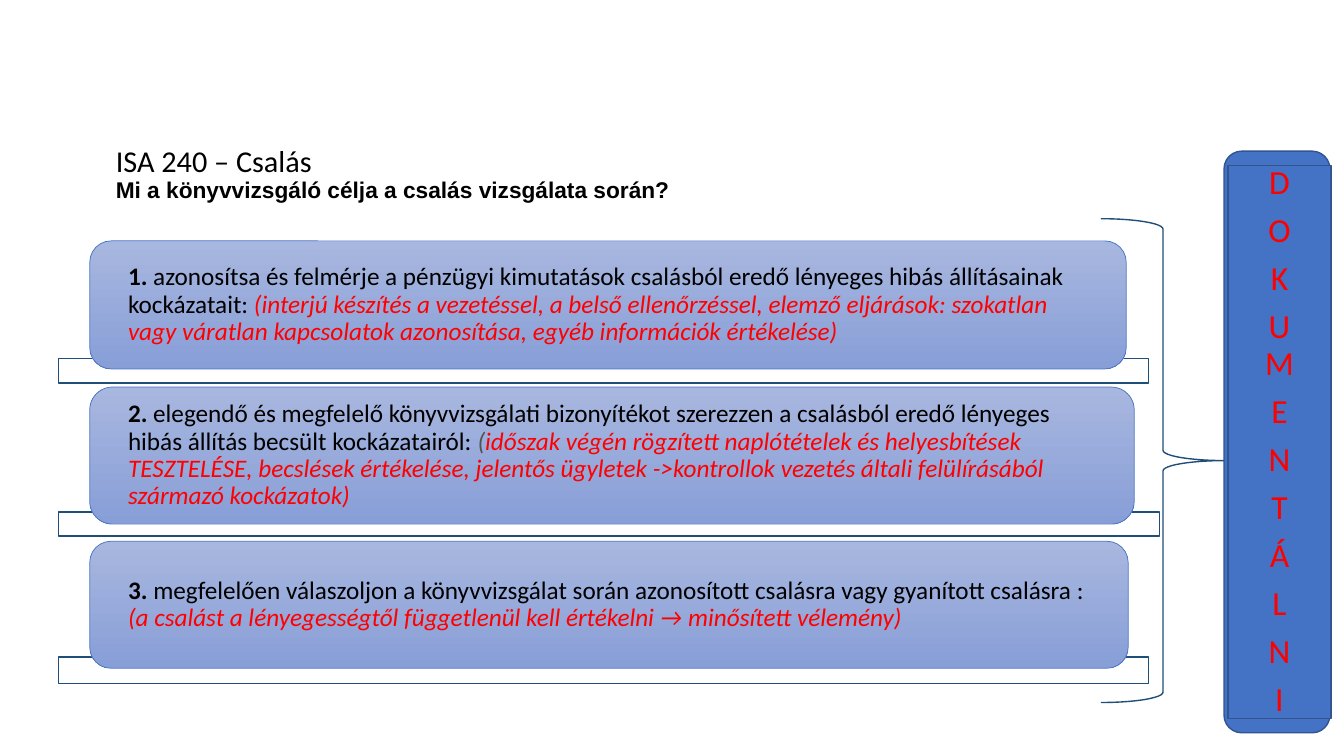
"""Build the ISA 240 slide on the auditor's objectives regarding fraud."""
import dataclasses
import typing

import pptx
import pptx.dml.color
import pptx.enum.shapes
import pptx.enum.text
import pptx.util

Inches = pptx.util.Inches
Pt = pptx.util.Pt
SHAPE = pptx.enum.shapes.MSO_SHAPE
ANCHOR = pptx.enum.text.MSO_ANCHOR
ALIGN = pptx.enum.text.PP_ALIGN

COLORS = {
    "black": "000000",
    "white": "FFFFFF",
    "red": "FF0000",
    "gray": "525252",
    "navy": "1F4E79",
    "blue": "4472C4",
    "edge": "325491",
    "card_top": "A8B7DF",
    "card_bottom": "889ED7",
}
CARD_LEFT = 0.89
BAR_LEFT = 0.58
TEXT_MARGIN = 0.06


class Run(typing.NamedTuple):
    text: str
    color: str = "black"
    bold: bool = False
    italic: bool = False
    size: typing.Optional[float] = None
    font: str = "Calibri"


@dataclasses.dataclass
class Box:
    left: float
    top: float
    width: float
    height: float

    def lengths(self) -> list:
        return [Inches(v) for v in dataclasses.astuple(self)]


@dataclasses.dataclass
class Objective:
    card: Box
    bar: Box
    runs: list


OBJECTIVES = [
    Objective(
        Box(CARD_LEFT, 2.39, 10.28, 1.27),
        Box(BAR_LEFT, 3.56, 10.81, 0.24),
        [
            Run("1. ", bold=True),
            Run("azonosítsa és felmérje a pénzügyi kimutatások csalásból eredő "
                "lényeges hibás állításainak kockázatait: "),
            Run("(interjú készítés a vezetéssel, a belső ellenőrzéssel, elemző "
                "eljárások: szokatlan vagy váratlan kapcsolatok azonosítása, "
                "egyéb információk értékelése)", "red", italic=True),
        ],
    ),
    Objective(
        Box(CARD_LEFT, 3.84, 10.36, 1.36),
        Box(BAR_LEFT, 5.08, 10.92, 0.24),
        [
            Run("2.", bold=True),
            Run(" elegendő és megfelelő könyvvizsgálati bizonyítékot szerezzen a "
                "csalásból eredő lényeges hibás állítás becsült kockázatairól: "),
            Run("(", "gray", italic=True),
            Run("időszak végén rögzített naplótételek és helyesbítések "
                "TESZTELÉSE, becslések értékelése, jelentős ügyletek "
                "->kontrollok vezetés általi felülírásából származó kockázatok)",
                "red", italic=True),
        ],
    ),
    Objective(
        Box(CARD_LEFT, 5.37, 10.3, 1.26),
        Box(BAR_LEFT, 6.52, 10.81, 0.26),
        [
            Run("3. ", bold=True),
            Run("megfelelően válaszoljon a könyvvizsgálat során azonosított "
                "csalásra vagy gyanított csalásra : "),
            Run("(a csalást a lényegességtől függetlenül kell értékelni → "
                "minősített vélemény)", "red", italic=True),
        ],
    ),
]
TITLE = [
    [Run("ISA 240 – Csalás", size=21.6)],
    [Run("Mi a könyvvizsgáló célja a csalás vizsgálata során?",
         bold=True, size=16.2, font="Arial")],
]
LETTERS = ["D", "O", "K", "UM", "E", "N", "T", "Á", "L", "N", "I"]


def rgb(name: str) -> pptx.dml.color.RGBColor:
    return pptx.dml.color.RGBColor.from_string(COLORS[name])


def add_shape(s, kind, box: Box, line: str, fill: typing.Sequence[str] = (),
              weight: float = 1):
    """Add a shape with no fill, one solid colour or a vertical gradient."""
    sp = s.shapes.add_shape(kind, *box.lengths())
    sp.shadow.inherit = False
    sp.line.color.rgb = rgb(line)
    sp.line.width = Pt(weight)
    if not fill:
        sp.fill.background()
    elif len(fill) == 1:
        sp.fill.solid()
        sp.fill.fore_color.rgb = rgb(fill[0])
    else:
        sp.fill.gradient()
        sp.fill.gradient_angle = 270
        for stop, name in zip(sp.fill.gradient_stops, fill):
            stop.color.rgb = rgb(name)
    return sp


def write_text(sp, paragraphs: list, *, size: float = 18, align=ALIGN.LEFT,
               anchor=ANCHOR.MIDDLE, inset_x: float = 0.32,
               inset_y: float = 0, gap: float = 0) -> None:
    """Fill a shape's text frame with paragraphs made of runs."""
    tf = sp.text_frame
    tf.word_wrap = True
    tf.vertical_anchor = anchor
    tf.margin_left = tf.margin_right = Inches(inset_x)
    tf.margin_top = tf.margin_bottom = Inches(inset_y)
    for i, runs in enumerate(paragraphs):
        p = tf.add_paragraph() if i else tf.paragraphs[0]
        p.alignment = align
        p.line_spacing = 0.9
        p.space_after = Pt(gap)
        for run in runs:
            r = p.add_run()
            r.text = run.text
            r.font.name = run.font
            r.font.size = Pt(run.size or size)
            r.font.bold = run.bold
            r.font.italic = run.italic
            r.font.color.rgb = rgb(run.color)


def add_objective(s, objective: Objective) -> None:
    """Draw the bar, the card over it and the card's text."""
    card = objective.card
    add_shape(s, SHAPE.RECTANGLE, objective.bar, "navy", ["white"])
    add_shape(s, SHAPE.ROUNDED_RECTANGLE, card, "blue",
              ["card_top", "card_bottom"], 0.5)
    inner = Box(card.left + TEXT_MARGIN, card.top + TEXT_MARGIN,
                card.width - 2 * TEXT_MARGIN, card.height - 2 * TEXT_MARGIN)
    write_text(s.shapes.add_textbox(*inner.lengths()), [objective.runs])


def main() -> None:
    prs = pptx.Presentation()
    prs.slide_width = Inches(13.33)
    prs.slide_height = Inches(7.5)
    s = prs.slides.add_slide(prs.slide_layouts[6])

    title = s.shapes.add_textbox(*Box(1.05, 1.4, 11.33, 0.55).lengths())
    write_text(title, TITLE, anchor=ANCHOR.TOP, inset_x=0.1, inset_y=0.05)

    for objective in OBJECTIVES:
        add_objective(s, objective)

    add_shape(s, SHAPE.RIGHT_BRACE, Box(10.92, 2.17, 1.23, 4.8), "navy")
    add_shape(s, SHAPE.ROUNDED_RECTANGLE, Box(12.14, 1.5, 1.05, 5.77),
              "edge", ["blue"])
    panel = add_shape(s, SHAPE.RECTANGLE, Box(12.18, 1.64, 1.02, 5.49),
                      "edge", ["blue"])
    write_text(panel, [[Run(letter, "red")] for letter in LETTERS], size=24,
               align=ALIGN.CENTER, inset_x=0.27, inset_y=0.13, gap=8.4)

    prs.save("out.pptx")


if __name__ == "__main__":
    main()
